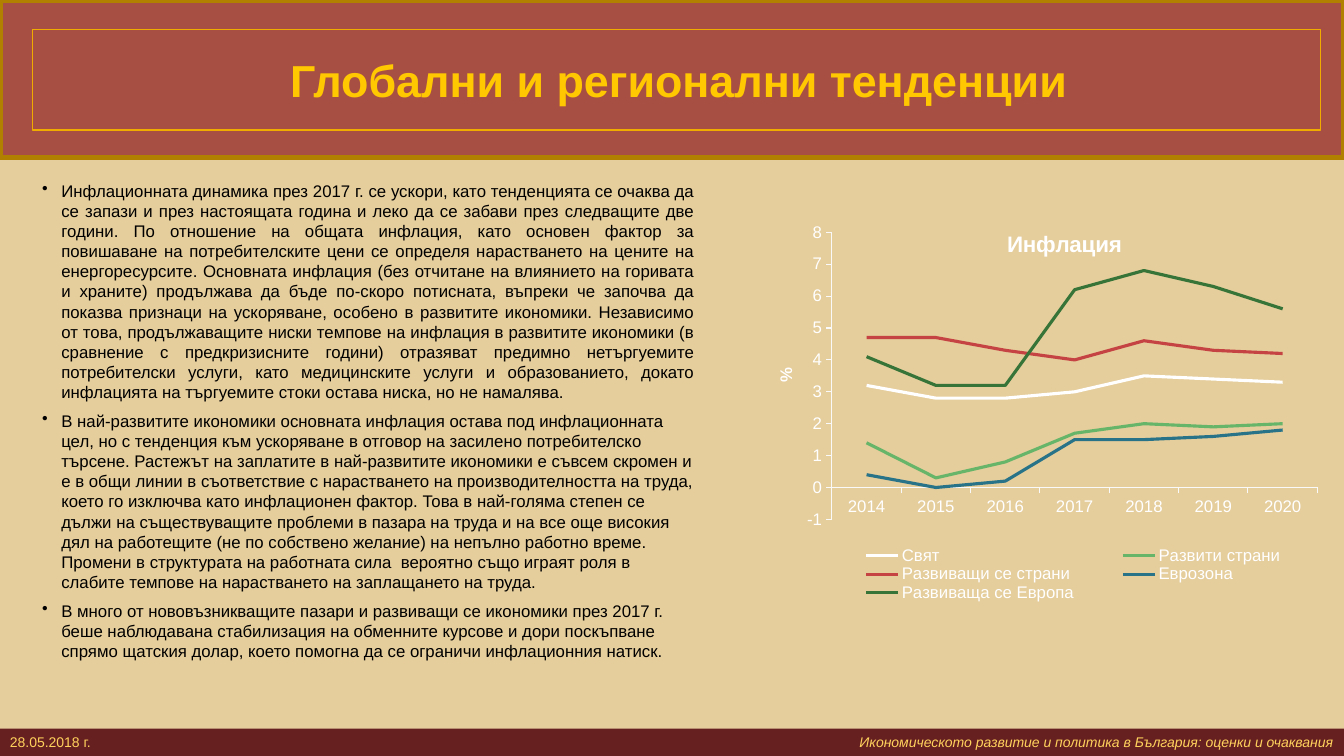
from collections import namedtuple
from dataclasses import dataclass

from pptx import Presentation
from pptx.chart.data import CategoryChartData as Data
from pptx.dml.color import RGBColor as RGB
from pptx.enum.chart import XL_CHART_TYPE as Kind
from pptx.enum.chart import XL_LEGEND_POSITION as Side
from pptx.enum.chart import XL_TICK_MARK as Tick
from pptx.enum.shapes import MSO_SHAPE as Shape
from pptx.enum.text import MSO_ANCHOR as Anchor
from pptx.enum.text import PP_ALIGN as Align
from pptx.oxml import parse_xml
from pptx.oxml.ns import nsdecls, qn
from pptx.util import Inches, Pt

Box = namedtuple("Box", "x y w h")


@dataclass(frozen=True)
class Theme:
    font: str = "Arial"
    sand: str = "E5CD9C"
    brick: str = "A84F44"
    bronze: str = "B28000"
    amber: str = "F0AD00"
    gold: str = "FFC800"
    wine: str = "672020"
    pale: str = "FFD25D"
    ink: str = "000000"
    white: str = "FFFFFF"
    axis: str = "F9F9F9"
    head: int = 32
    title: int = 16
    body: int = 12
    small: int = 10


THEME = Theme()
TITLE = "Глобални и регионални тенденции"
DATE = "28.05.2018 г."
TOPIC = "Икономическото развитие и политика в България: оценки и очаквания"
POINTS = [
    "Инфлационната динамика през 2017 г. се ускори, като тенденцията се очаква да се запази и през настоящата "
    "година и леко да се забави през следващите две години. По отношение на общата инфлация, като основен фактор "
    "за повишаване на потребителските цени се определя нарастването на цените на енергоресурсите. Основната "
    "инфлация (без отчитане на влиянието на горивата и храните) продължава да бъде по-скоро потисната, въпреки "
    "че започва да показва признаци на ускоряване, особено в развитите икономики. Независимо от това, "
    "продължаващите ниски темпове на инфлация в развитите икономики (в сравнение с предкризисните години) "
    "отразяват предимно нетъргуемите потребителски услуги, като медицинските услуги и образованието, докато "
    "инфлацията на търгуемите стоки остава ниска, но не намалява.",
    "В най-развитите икономики основната инфлация остава под инфлационната цел, но с тенденция към ускоряване в "
    "отговор на засилено потребителско търсене. Растежът на заплатите в най-развитите икономики е съвсем скромен "
    "и е в общи линии в съответствие с нарастването на производителността на труда, което го изключва като "
    "инфлационен фактор. Това в най-голяма степен се дължи на съществуващите проблеми в пазара на труда и на все "
    "още високия дял на работещите (не по собствено желание) на непълно работно време. Промени в структурата на "
    "работната сила  вероятно също играят роля в слабите темпове на нарастването на заплащането на труда.",
    "В много от нововъзникващите пазари и развиващи се икономики през 2017 г. беше наблюдавана стабилизация на "
    "обменните курсове и дори поскъпване спрямо щатския долар, което помогна да се ограничи инфлационния натиск.",
]
YEARS = [str(year) for year in range(2014, 2021)]
SERIES = [
    ("Свят", "FFFFFF", (3.2, 2.8, 2.8, 3, 3.5, 3.4, 3.3)),
    ("Развити страни", "67B569", (1.4, 0.3, 0.8, 1.7, 2, 1.9, 2)),
    ("Развиващи се страни", "C54342", (4.7, 4.7, 4.3, 4, 4.6, 4.3, 4.2)),
    ("Еврозона", "287388", (0.4, 0, 0.2, 1.5, 1.5, 1.6, 1.8)),
    ("Развиваща се Европа", "367438", (4.1, 3.2, 3.2, 6.2, 6.8, 6.3, 5.6)),
]


def color(code):
    return RGB.from_string(code)


def style(font, size, code, bold=False, italic=False):
    font.name, font.size = THEME.font, Pt(size)
    font.bold, font.italic = bold, italic
    font.color.rgb = color(code)


def write(para, text, size=THEME.body, code=THEME.ink, bold=False, italic=False, align=None):
    """Add one formatted run to a paragraph."""
    run = para.add_run()
    run.text = text
    style(run.font, size, code, bold, italic)
    if align is not None:
        para.alignment = align


def stroke(line, code, width):
    line.color.rgb = color(code)
    line.width = Pt(width)


def inch(box):
    return [Inches(part) for part in box]


def band(slide, box, fill):
    shape = slide.shapes.add_shape(Shape.RECTANGLE, *inch(box))
    shape.shadow.inherit = False
    shape.fill.solid()
    shape.fill.fore_color.rgb = color(fill)
    shape.line.fill.background()
    return shape


def header(slide, box):
    back = band(slide, box, THEME.brick)
    stroke(back.line, THEME.bronze, 3.78)
    title = slide.shapes.title
    title.element.getparent().append(title.element)  # bring in front of the band
    title.left, title.top, title.width, title.height = inch(
        Box(box.x + 0.32, box.y + 0.29, box.w - 0.55, 1))
    stroke(title.line, THEME.amber, 0.75)
    frame = title.text_frame
    frame.vertical_anchor = Anchor.MIDDLE
    frame.margin_left = Inches(0.1)
    frame.margin_top = frame.margin_right = frame.margin_bottom = Inches(0.05)
    write(frame.paragraphs[0], TITLE, THEME.head, THEME.gold, bold=True, align=Align.CENTER)


def footer(slide, box):
    strip = band(slide, box, THEME.wine)
    strip.text_frame.vertical_anchor = Anchor.MIDDLE
    para = strip.text_frame.paragraphs[0]
    write(para, DATE + "\t", THEME.small, THEME.pale, align=Align.LEFT)
    write(para, TOPIC, THEME.small, THEME.pale, italic=True)
    stop = Inches(box.w - 0.21)
    strip.element.xpath(".//a:pPr")[0].append(parse_xml(
        f'<a:tabLst {nsdecls("a")}><a:tab pos="{stop}" algn="r"/></a:tabLst>'))


def bullets(slide, box):
    text = slide.shapes.add_textbox(*inch(box))
    frame = text.text_frame
    frame.word_wrap = True
    for i, point in enumerate(POINTS):
        para = frame.add_paragraph() if i else frame.paragraphs[0]
        write(para, point, align=Align.LEFT if i else Align.JUSTIFY)
        para.space_after = Pt(6)
    for props in text.element.xpath(".//a:pPr"):
        props.set("marL", str(Inches(0.19)))
        props.set("indent", str(Inches(-0.19)))
        props.append(parse_xml(f'<a:buChar {nsdecls("a")} char="•"/>'))


def place(node, index, x, y, w=None, h=None, inner=False):
    """Give a chart part a manual layout, in shares of the chart."""
    for old in node.findall(qn("c:layout")):
        node.remove(old)
    parts = [("layoutTarget", "inner")] if inner else []
    parts += [("xMode", "edge"), ("yMode", "edge"), ("x", x), ("y", y)]
    if w:
        parts += [("w", w), ("h", h)]
    body = "".join(f'<c:{tag} val="{val}"/>' for tag, val in parts)
    node.insert(index, parse_xml(
        f'<c:layout {nsdecls("c")}><c:manualLayout>{body}</c:manualLayout></c:layout>'))


def graph(slide, box):
    data = Data(number_format="0.0")
    data.categories = YEARS
    for name, _, vals in SERIES:
        data.add_series(name, vals)
    chart = slide.shapes.add_chart(Kind.LINE, *inch(box), data).chart
    style(chart.font, THEME.body, THEME.white)
    chart.plots[0].vary_by_categories = False
    for line, (_, code, _) in zip(chart.plots[0].series, SERIES):
        line.smooth = False
        stroke(line.format.line, code, 2.25)
    years, rates = chart.category_axis, chart.value_axis
    for axis in (years, rates):
        axis.has_major_gridlines = False
        axis.major_tick_mark, axis.minor_tick_mark = Tick.OUTSIDE, Tick.NONE
        style(axis.tick_labels.font, THEME.body, THEME.white)
        stroke(axis.format.line, THEME.axis, 0.75)
    rates.minimum_scale, rates.maximum_scale, rates.major_unit = -1, 8, 1
    rates.tick_labels.number_format = "0"
    rates.tick_labels.number_format_is_linked = False
    for title, text, size in ((chart.chart_title, "Инфлация", THEME.title),
                              (rates.axis_title, "%", THEME.body)):
        write(title.text_frame.paragraphs[0], text, size, THEME.white, bold=True)
    chart.has_legend = True
    chart.legend.position = Side.BOTTOM
    chart.legend.include_in_layout = False
    style(chart.legend.font, THEME.body, THEME.white)
    root = chart.element
    head, unit = root.xpath(".//c:title")
    place(head, 1, 0.41, 0.03)
    place(unit, 1, 0, 0.38)
    place(root.xpath(".//c:legend")[0], 1, 0.09, 0.84, 0.89, 0.14)
    place(root.xpath(".//c:plotArea")[0], 0, 0.106, 0.047, 0.863, 0.725, inner=True)


def main():
    deck = Presentation()
    deck.slide_width, deck.slide_height = Inches(13.33), Inches(7.5)
    slide = deck.slides.add_slide(deck.slide_layouts[5])
    slide.background.fill.solid()
    slide.background.fill.fore_color.rgb = color(THEME.sand)
    header(slide, Box(0, 0, 13.33, 1.56))
    footer(slide, Box(0, 7.23, 13.33, 0.27))
    graph(slide, Box(7.66, 2.12, 5.58, 3.93))
    bullets(slide, Box(0.32, 1.74, 6.67, 4.91))
    deck.save("out.pptx")


if __name__ == "__main__":
    main()
